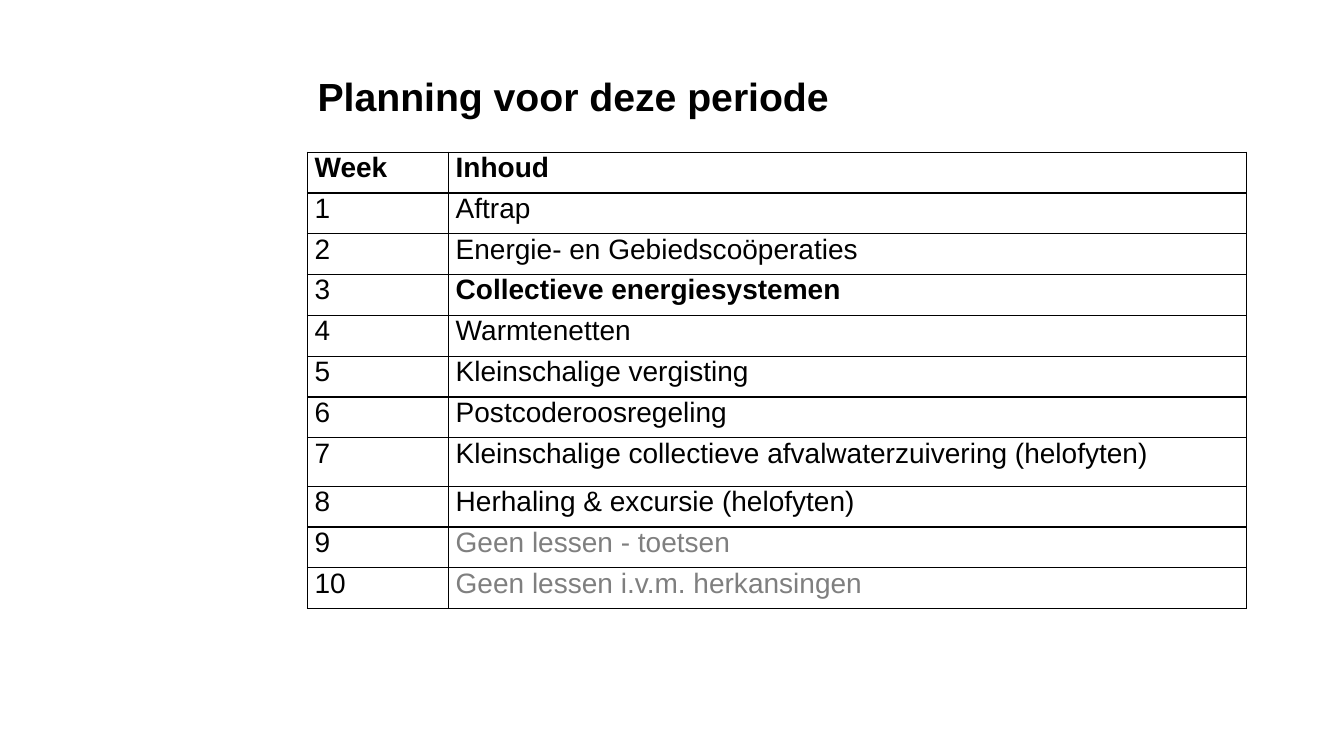
from dataclasses import dataclass

from lxml import etree
from pptx import Presentation
from pptx.dml.color import RGBColor
from pptx.enum.text import MSO_ANCHOR, MSO_AUTO_SIZE, PP_ALIGN
from pptx.oxml.ns import qn
from pptx.util import Inches, Pt

TOP = MSO_ANCHOR.TOP
LEFT = PP_ALIGN.LEFT
NO_AUTOFIT = MSO_AUTO_SIZE.NONE
TITLE_ONLY = 5


@dataclass(frozen=True)
class Theme:
    font: str = "Arial"
    ink: str = "000000"
    muted: str = "7F7F7F"
    title_size: int = 28
    table_size: int = 20
    border_width: int = 1


THEME = Theme()

HEADINGS = ("Week", "Inhoud")
TOPICS = (
    "Aftrap",
    "Energie- en Gebiedscoöperaties",
    "Collectieve energiesystemen",
    "Warmtenetten",
    "Kleinschalige vergisting",
    "Postcoderoosregeling",
    "Kleinschalige collectieve afvalwaterzuivering (helofyten)",
    "Herhaling & excursie (helofyten)",
    "Geen lessen - toetsen",
    "Geen lessen i.v.m. herkansingen",
)
CURRENT_WEEK = 3
TALL_WEEK = 7
WEEKS_WITHOUT_LESSONS = (9, 10)

COLUMN_WIDTHS = (1.4, 7.91)
TABLE_HEIGHT = 4.53
TALL_ROW_HEIGHT = 0.48


def style_text(text_frame, size, color=THEME.ink, bold=False):
    paragraph = text_frame.paragraphs[0]
    paragraph.alignment = LEFT
    for span in paragraph.runs:
        span.font.name = THEME.font
        span.font.size = Pt(size)
        span.font.bold = bold
        span.font.color.rgb = RGBColor.from_string(color)


def add_title(page, text):
    title = page.shapes.title
    title.left, title.top = Inches(3.05), Inches(0.63)
    title.width, title.height = Inches(9.17), Inches(0.88)
    frame = title.text_frame
    frame.text = text
    frame.word_wrap = True
    frame.auto_size = NO_AUTOFIT
    frame.vertical_anchor = TOP
    frame.margin_top = Inches(0.09)
    style_text(frame, THEME.title_size, bold=True)


def add_borders(cell):
    properties = cell._tc.get_or_add_tcPr()
    for side in ("a:lnL", "a:lnR", "a:lnT", "a:lnB"):
        line = etree.SubElement(properties, qn(side), w=str(Pt(THEME.border_width)))
        fill = etree.SubElement(line, qn("a:solidFill"))
        etree.SubElement(fill, qn("a:srgbClr"), val=THEME.ink)


def fill_cell(cell, text, color=THEME.ink, bold=False):
    cell.text = text
    cell.margin_left = cell.margin_right = Inches(0.07)
    cell.margin_top = cell.margin_bottom = 0
    cell.vertical_anchor = TOP
    add_borders(cell)
    cell.fill.background()
    style_text(cell.text_frame, THEME.table_size, color, bold)


def add_planning(page):
    table = page.shapes.add_table(
        len(TOPICS) + 1, len(HEADINGS), Inches(3.05), Inches(1.51),
        Inches(sum(COLUMN_WIDTHS)), Inches(TABLE_HEIGHT),
    ).table
    table.first_row = table.horz_banding = False
    for column, width in zip(table.columns, COLUMN_WIDTHS):
        column.width = Inches(width)
    row_height = (TABLE_HEIGHT - TALL_ROW_HEIGHT) / len(TOPICS)
    for week, row in enumerate(table.rows):
        row.height = Inches(TALL_ROW_HEIGHT if week == TALL_WEEK else row_height)

    for column, heading in enumerate(HEADINGS):
        fill_cell(table.cell(0, column), heading, bold=True)
    for week, topic in enumerate(TOPICS, start=1):
        color = THEME.muted if week in WEEKS_WITHOUT_LESSONS else THEME.ink
        fill_cell(table.cell(week, 0), str(week))
        fill_cell(table.cell(week, 1), topic, color, bold=week == CURRENT_WEEK)


def main():
    deck = Presentation()
    deck.slide_width, deck.slide_height = Inches(13.33), Inches(7.5)
    page = deck.slides.add_slide(deck.slide_layouts[TITLE_ONLY])
    add_title(page, "Planning voor deze periode")
    add_planning(page)
    deck.save("out.pptx")


if __name__ == "__main__":
    main()
